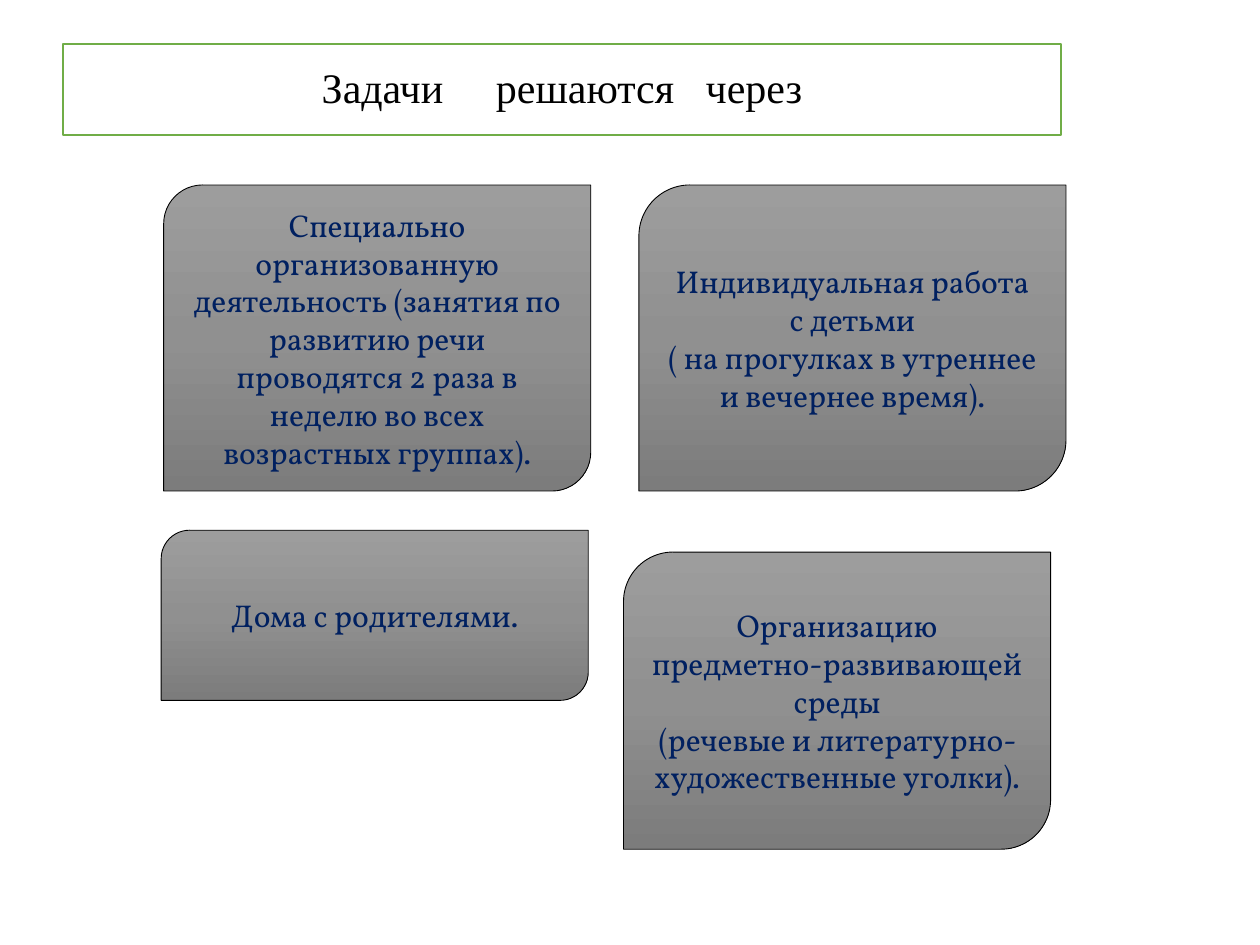
from copy import deepcopy

from pptx import Presentation
from pptx.dml.color import RGBColor
from pptx.enum.shapes import MSO_SHAPE
from pptx.enum.text import MSO_ANCHOR, PP_ALIGN
from pptx.util import Cm, Pt

CARD_WIDTH = 8.61
TOP_ROW = 3.73
TOP_HEIGHT = 6.17
CARD_GRADIENT = [(0, "9D9D9D"), (0.5, "909090"), (1, "7C7C7C")]
TITLE_PARTS = [("Задачи", 0), (" ", 24), ("решаются", 0), (" ", 12), ("через", 0)]
CARDS = [
    ((3.3, TOP_ROW, CARD_WIDTH, TOP_HEIGHT), 0.127,
     ["Специально организованную деятельность (занятия по развитию речи "
      "проводятся 2 раза в неделю во всех возрастных группах)."]),
    ((12.57, 11.13, CARD_WIDTH, 5.99), 0.1667,
     ["Организацию предметно-развивающей среды",
      "(речевые и литературно-художественные уголки)."]),
    ((12.88, TOP_ROW, CARD_WIDTH, TOP_HEIGHT), 0.1667,
     ["Индивидуальная работа с детьми",
      "( на прогулках в утреннее и вечернее время)."]),
    ((3.25, 10.69, CARD_WIDTH, 3.43), 0.1667, ["Дома с родителями."]),
]


def color(value):
    return RGBColor.from_string(value)


def add_panel(slide, preset, box, line_color, line_width):
    panel = slide.shapes.add_shape(preset, *(Cm(length) for length in box))
    panel.shadow.inherit = False
    panel.line.color.rgb = color(line_color)
    panel.line.width = Pt(line_width)
    panel.text_frame.word_wrap = True
    panel.text_frame.vertical_anchor = MSO_ANCHOR.MIDDLE
    return panel


def style_paragraph(paragraph, font_name, size, text_color):
    paragraph.alignment = PP_ALIGN.CENTER
    paragraph.font.name = font_name
    paragraph.font.size = Pt(size)
    paragraph.font.color.rgb = color(text_color)


def fill_gradient(fill, stops):
    fill.gradient()
    fill.gradient_angle = 270
    stop_list = fill._xPr.gradFill.gsLst
    stop_list.append(deepcopy(stop_list[-1]))
    for gradient_stop, (position, value) in zip(fill.gradient_stops, stops):
        gradient_stop.position = position
        gradient_stop.color.rgb = color(value)


def add_title(slide, box):
    title = add_panel(slide, MSO_SHAPE.RECTANGLE, box, "70AD47", 1)
    title.fill.solid()
    title.fill.fore_color.rgb = color("FFFFFF")
    heading = title.text_frame.paragraphs[0]
    heading.line_spacing = 0.9
    style_paragraph(heading, "Times New Roman", 24, "000000")
    for text, extra_gap in TITLE_PARTS:
        part = heading.add_run()
        part.text = text
        if extra_gap:
            part.font._element.set("spc", str(extra_gap * 100))


def add_card(slide, box, corner, lines):
    card = add_panel(slide, MSO_SHAPE.ROUND_2_DIAG_RECTANGLE, box, "000000", 0.5)
    card.adjustments[0] = corner
    fill_gradient(card.fill, CARD_GRADIENT)
    card.text_frame.text = "\n".join(lines)
    for paragraph in card.text_frame.paragraphs:
        style_paragraph(paragraph, "Vollkorn", 18, "002060")


def main():
    presentation = Presentation()
    presentation.slide_width = Cm(25.4)
    presentation.slide_height = Cm(19.05)
    slide = presentation.slides.add_slide(presentation.slide_layouts[6])
    add_title(slide, (1.27, 0.89, 20.12, 1.83))
    for box, corner, lines in CARDS:
        add_card(slide, box, corner, lines)
    presentation.save("out.pptx")


if __name__ == "__main__":
    main()
